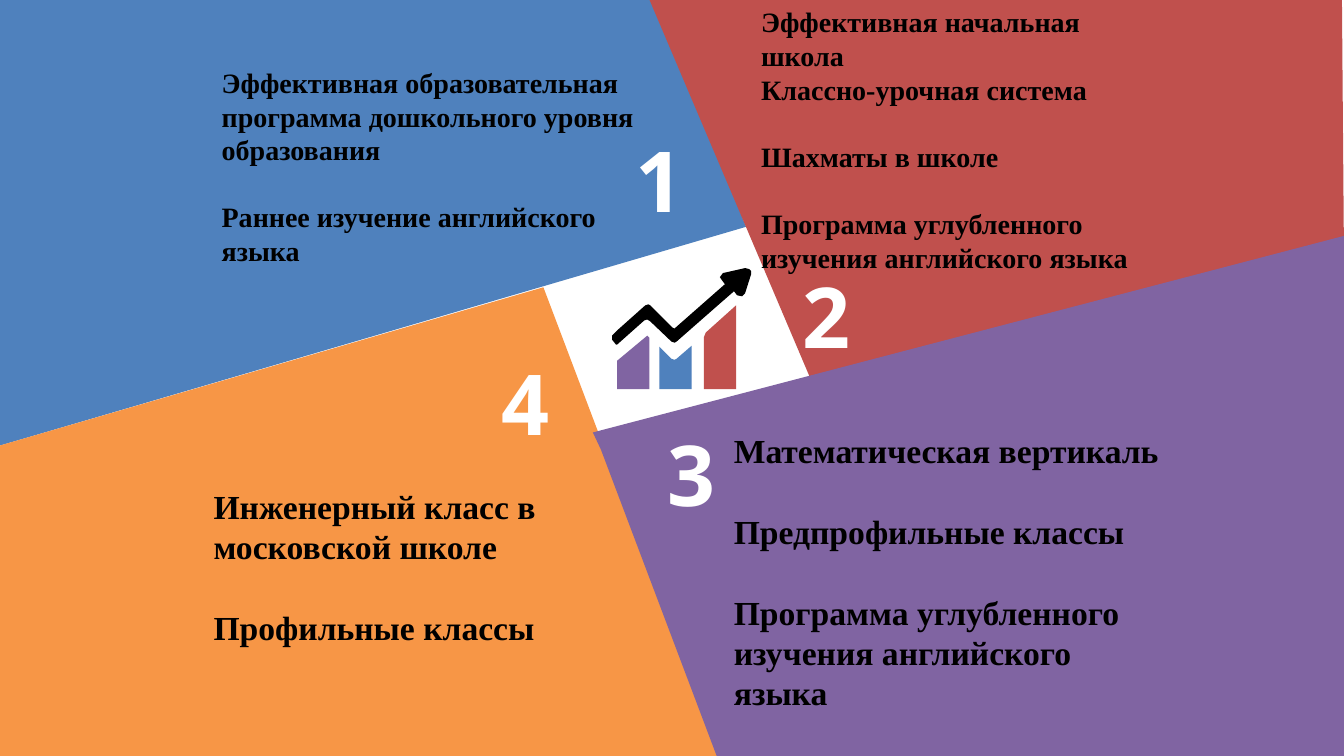
from pptx import Presentation
from pptx.dml.color import RGBColor
from pptx.enum.text import PP_ALIGN
from pptx.util import Pt

PX = 9144  # one px is a hundredth of an inch
LEFT, CENTER = PP_ALIGN.LEFT, PP_ALIGN.CENTER

BLUE = RGBColor(0x4F, 0x81, 0xBD)
RED = RGBColor(0xC0, 0x50, 0x4D)
ORANGE = RGBColor(0xF7, 0x96, 0x46)
PURPLE = RGBColor(0x80, 0x64, 0xA2)
BLACK = RGBColor(0, 0, 0)
WHITE = RGBColor(255, 255, 255)

PANELS = [
    (BLUE, [(0, -3), (650, -1), (740, 225), (0, 442)]),
    (RED, [(643, -3), (807, 383), (1333, 252), (1331, -1)]),
    (ORANGE, [(0, 442), (539, 285), (716, 753), (0, 753)]),
    (PURPLE, [(1333, 234), (1333, 752), (712, 753), (596, 446), (588, 429)]),
]

GROWTH_ICON = [
    (RED, [(730, 303), (730, 386), (698, 386), (698, 335), (700, 330)]),
    (BLACK, [(669, 326), (719, 282), (716, 278), (714, 275), (717, 271),
             (739, 266), (743, 267), (745, 269), (745, 272), (739, 291),
             (736, 294), (731, 293), (728, 289), (712, 303), (671, 339),
             (669, 340), (666, 339), (645, 319), (642, 317), (639, 318),
             (612, 342), (611, 342), (607, 337), (607, 333), (612, 328),
             (640, 303), (643, 302), (645, 303), (667, 325)]),
    (PURPLE, [(642, 333), (644, 335), (644, 386), (612, 386), (612, 358)]),
    (BLUE, [(686, 343), (686, 386), (654, 386), (654, 344), (666, 356),
            (669, 357), (671, 356)]),
]

# Box, size, then paragraphs as (text, blank lines' worth of space before)
TOPICS = [
    ((210, 60, 433, 212), 20, [
        ("Эффективная образовательная программа дошкольного уровня образования", 0),
        ("Раннее изучение английского языка", 1)]),
    ((745, 0, 394, 279), 20, [
        ("Эффективная начальная школа", 0),
        ("Классно-урочная система", 0),
        ("Шахматы в школе", 1),
        ("Программа углубленного изучения английского языка", 1)]),
    ((202, 477, 444, 199), 24, [
        ("Инженерный класс в московской школе", 0),
        ("Профильные классы", 1)]),
    ((718, 422, 449, 293), 24, [
        ("Математическая вертикаль", 0),
        ("Предпрофильные классы", 1),
        ("Программа углубленного изучения английского языка", 1)]),
]

NUMBERS = [
    ("1", 619, 123, "Open Sans"),
    ("2", 785, 257, "Open Sans"),
    ("3", 651, 414, "Noto Sans"),
    ("4", 486, 344, "Noto Sans"),
]


def add_polygon(shapes, points, color):
    builder = shapes.build_freeform(*points[0], scale=PX)
    builder.add_line_segments(points[1:], close=True)
    sp = builder.convert_to_shape()
    sp.shadow.inherit = False
    sp.fill.solid()
    sp.fill.fore_color.rgb = color
    sp.line.fill.background()


def add_text(s, box, paragraphs, size, font="Times New Roman", color=BLACK,
             align=LEFT, line=None):
    tf = s.shapes.add_textbox(*(v * PX for v in box)).text_frame
    tf.word_wrap = True
    for i, (text, gap) in enumerate(paragraphs):
        p = tf.add_paragraph() if i else tf.paragraphs[0]
        p.alignment = align
        if line:
            p.line_spacing = Pt(line)
        if gap:
            p.space_before = Pt(gap * line)
        r = p.add_run()
        r.text = text
        r.font.name = font
        r.font.size = Pt(size)
        r.font.bold = True
        r.font.color.rgb = color


def main():
    prs = Presentation()
    prs.slide_width, prs.slide_height = 1333 * PX, 750 * PX
    s = prs.slides.add_slide(prs.slide_layouts[6])

    # Four panels around the centre
    for color, points in PANELS:
        add_polygon(s.shapes, points, color)

    # Growth chart icon
    icon = s.shapes.add_group_shape()
    for color, points in GROWTH_ICON:
        add_polygon(icon.shapes, points, color)

    # Topics of each panel
    for box, size, paragraphs in TOPICS:
        add_text(s, box, paragraphs, size, line=size * 1.2)

    # Panel numbers
    for number, x, y, font in NUMBERS:
        add_text(s, (x, y, 70, 111), [(number, 0)], 60, font=font,
                 color=WHITE, align=CENTER)

    prs.save("out.pptx")


if __name__ == "__main__":
    main()
